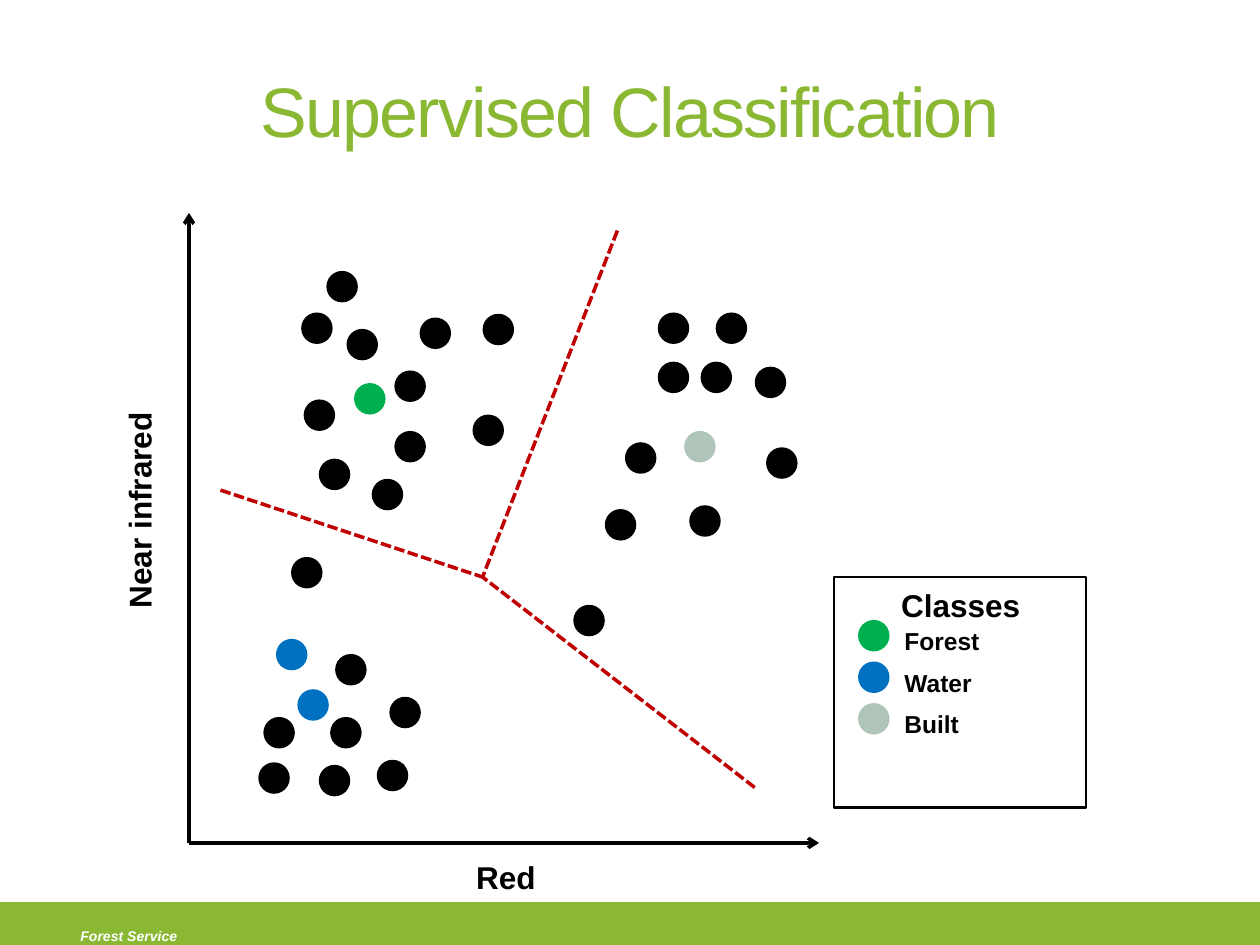
from lxml import etree
from pptx import Presentation
from pptx.dml.color import RGBColor
from pptx.enum.dml import MSO_LINE
from pptx.enum.shapes import MSO_CONNECTOR, MSO_SHAPE
from pptx.enum.text import MSO_ANCHOR, PP_ALIGN
from pptx.oxml.ns import qn
from pptx.util import Inches, Pt

CENTER, LEFT = PP_ALIGN.CENTER, PP_ALIGN.LEFT
MIDDLE = MSO_ANCHOR.MIDDLE
RECT, DOT = MSO_SHAPE.RECTANGLE, MSO_SHAPE.FLOWCHART_CONNECTOR
STRAIGHT = MSO_CONNECTOR.STRAIGHT
DASH = MSO_LINE.SQUARE_DOT  # written as sysDot
FONT = "Arial"
DOT_SIZE = 0.25

COLORS = {
    "brand": "8AB833", "white": "FFFFFF", "black": "000000",
    "forest": "00B050", "water": "0070C0", "built": "AFC5B9",
    "boundary": "C00000",
}

# Left and top of each sample point, by class
POINTS = {
    "black": [
        # near the water samples
        (2.09, 5.69), (2.53, 6.07), (2.62, 5.69), (2.66, 5.19), (2.05, 6.05),
        (2.99, 6.03), (3.09, 5.53), (2.31, 4.42),
        # near the forest sample
        (2.59, 2.15), (2.39, 2.48), (2.75, 2.61), (3.33, 2.52), (2.53, 3.64),
        (3.83, 2.49), (3.13, 3.42), (2.41, 3.17), (3.13, 2.94), (2.95, 3.8),
        (3.75, 3.29),
        # near the built sample
        (5.22, 2.87), (5.99, 2.91), (5.47, 4.01), (6.08, 3.55), (4.55, 4.8),
        (4.96, 3.51), (5.56, 2.87), (4.8, 4.04), (5.22, 2.48), (5.68, 2.48),
    ],
    "forest": [(2.81, 3.04)],
    "water": [(2.19, 5.07), (2.36, 5.47)],
    "built": [(5.43, 3.42)],
}


def rgb(name):
    return RGBColor.from_string(COLORS[name])


def add_shape(s, kind, x, y, w, h, fill=None, line=None, width=1.5):
    sp = s.shapes.add_shape(kind, Inches(x), Inches(y), Inches(w), Inches(h))
    sp.shadow.inherit = False
    if fill:
        sp.fill.solid()
        sp.fill.fore_color.rgb = rgb(fill)
    else:
        sp.fill.background()
    if line:
        sp.line.color.rgb = rgb(line)
        sp.line.width = Pt(width)
    else:
        sp.line.fill.background()
    return sp


def add_dot(s, x, y, color):
    return add_shape(s, DOT, x, y, DOT_SIZE, DOT_SIZE, color)


def add_line(s, start, end, color, arrow=False):
    c = s.shapes.add_connector(STRAIGHT, *(Inches(v) for v in start + end))
    c.line.color.rgb = rgb(color)
    c.line.width = Pt(2)
    ln = c.line._get_or_add_ln()
    if arrow:
        etree.SubElement(ln, qn("a:tailEnd"), type="arrow")
    else:
        c.line.dash_style = DASH
        ln.find(qn("a:prstDash")).set("val", "sysDash")
    etree.SubElement(c._element.spPr, qn("a:effectLst"))


def set_font(p, size, color, bold=False, italic=False):
    f = p.font
    f.name, f.size, f.bold, f.italic = FONT, Pt(size), bold, italic
    f.color.rgb = rgb(color)


def add_label(s, text, x, y, w, h, size, align=LEFT, color="black",
              italic=False, rotation=0):
    sp = s.shapes.add_textbox(Inches(x), Inches(y), Inches(w), Inches(h))
    sp.rotation = rotation
    tf = sp.text_frame
    tf.word_wrap = True
    p = tf.paragraphs[0]
    p.text = text
    p.alignment = align
    set_font(p, size, color, bold=True, italic=italic)


def add_title(s, text):
    sp = s.shapes.title
    sp.left, sp.top = Inches(0.5), Inches(0.33)
    sp.width, sp.height = Inches(9), Inches(1.08)
    tf = sp.text_frame
    tf.vertical_anchor = MIDDLE
    p = tf.paragraphs[0]
    r = p.add_run()
    r.text = text
    p.alignment = CENTER
    set_font(p, 40, "brand")
    r.font._element.set("spc", "-100")


def add_footer(s):
    add_shape(s, RECT, 0, 7.17, 10, 0.36, "brand", "brand", 2.08)
    add_label(s, "Forest Service", 0.54, 7.31, 2.04, 0.24, 8,
              color="white", italic=True)


def add_scatter(s):
    # Axes
    origin = (1.5, 6.69)
    for end in [(1.5, 1.69), (6.5, 6.69)]:
        add_line(s, origin, end, "black", arrow=True)
    add_label(s, "Near infrared", 0.22, 3.85, 1.77, 0.4, 18, CENTER,
              rotation=270)
    add_label(s, "Red", 3.13, 6.76, 1.77, 0.4, 18, CENTER)
    # Sample points
    for color, places in POINTS.items():
        for x, y in places:
            add_dot(s, x, y, color)
    # Class boundaries
    for start in [(1.75, 3.89), (4.9, 1.83), (5.99, 6.25)]:
        add_line(s, start, (3.83, 4.58), "boundary")


def add_legend(s):
    add_shape(s, RECT, 6.62, 4.58, 2, 1.83, line="black")
    add_label(s, "Classes", 6.74, 4.6, 1.77, 0.4, 18, CENTER)
    for i, name in enumerate(["Forest", "Water", "Built"]):
        y = 4.92 + 0.33 * i
        add_dot(s, 6.81, y, name.lower())
        add_label(s, name, 7.08, y, 1.77, 0.34, 14)


def main():
    prs = Presentation()
    prs.slide_width, prs.slide_height = Inches(10), Inches(7.5)
    s = prs.slides.add_slide(prs.slide_layouts[5])
    add_footer(s)
    add_title(s, "Supervised Classification")
    add_scatter(s)
    add_legend(s)
    prs.save("out.pptx")


if __name__ == "__main__":
    main()
